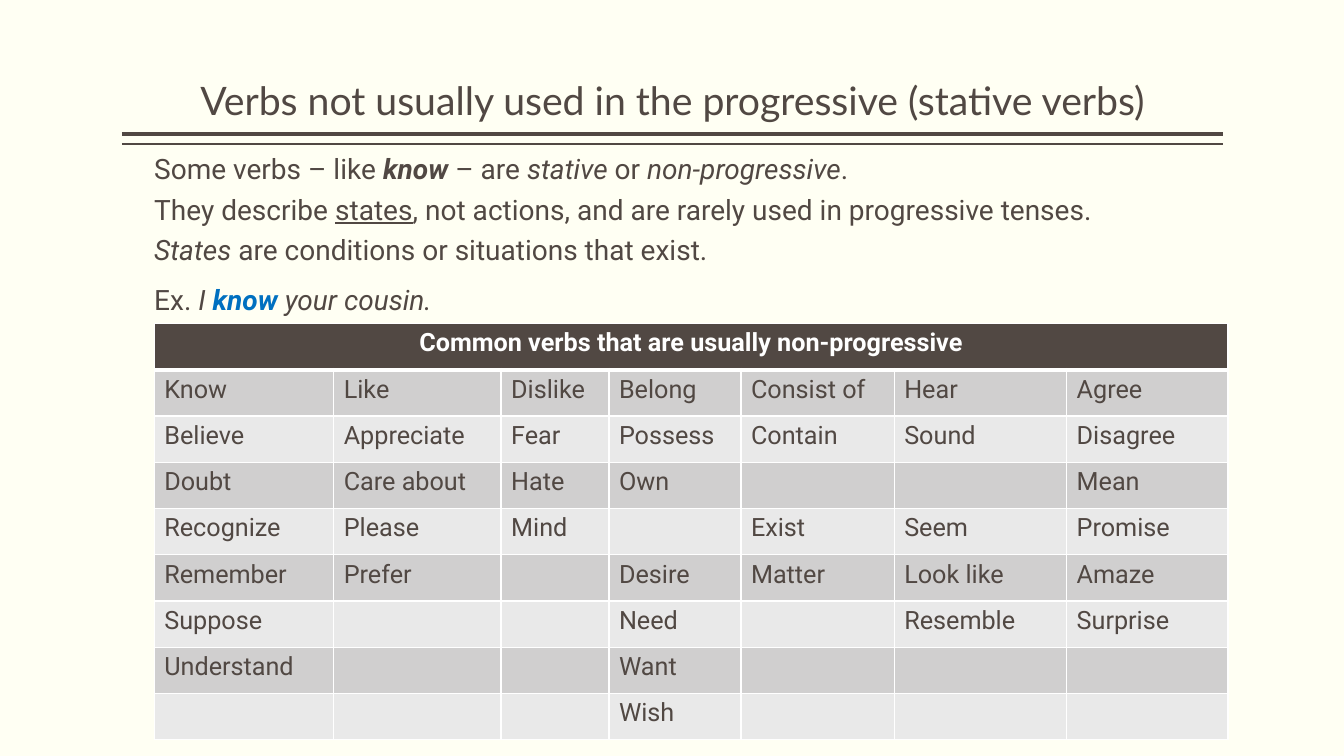
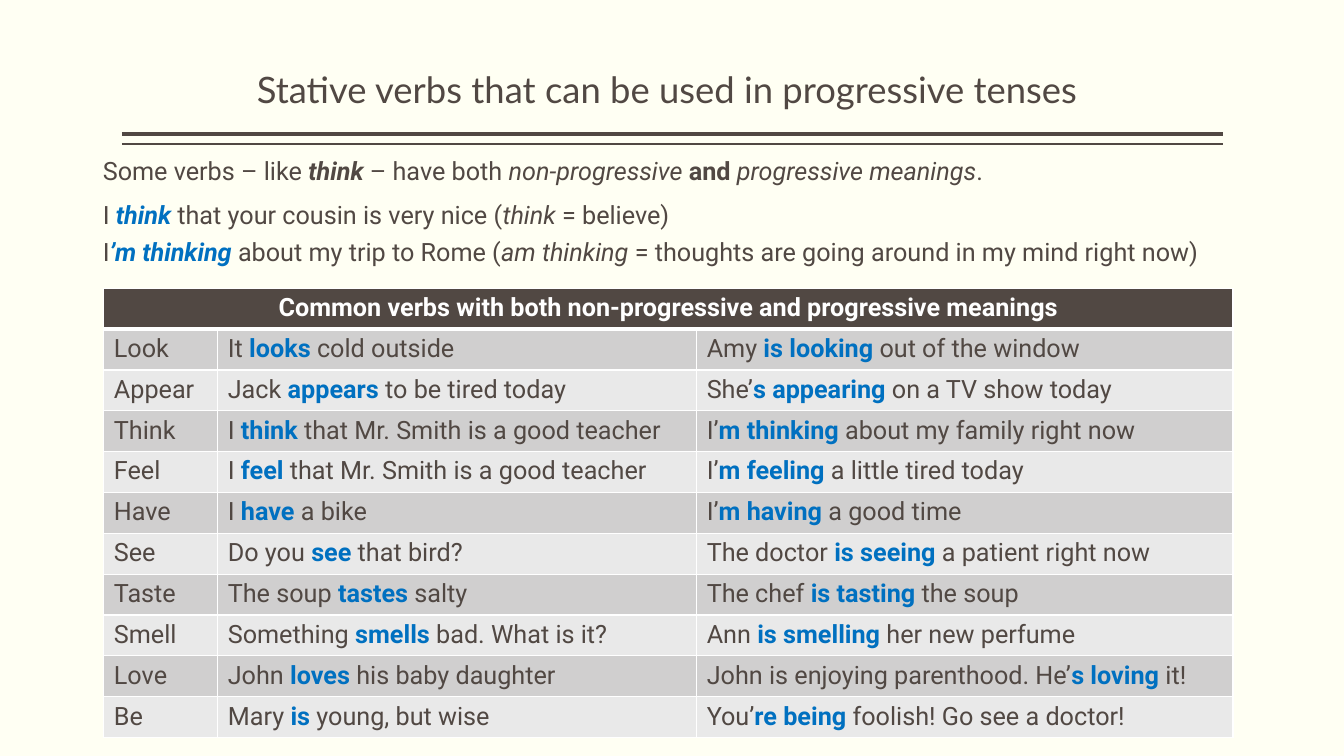
from dataclasses import dataclass

import pptx
import pptx.dml.color
import pptx.enum.shapes
import pptx.enum.text
import pptx.oxml.ns
import pptx.util
from lxml import etree

EMU_PER_PX = 9144  # 100 px to the inch


@dataclass(frozen=True)
class Theme:
    paper: str = "FFFFF3"
    ink: str = "514843"
    verb: str = "0070C0"
    white: str = "FFFFFF"
    bands: tuple = ("D0CFCF", "E9E9E9")
    title_font: str = "Lato"
    body_font: str = "Roboto"
    table_size: int = 18
    body_spacing: float = 1.2


THEME = Theme()

VERB_COLUMNS = [178, 166, 107, 131, 152, 171, 160]
VERB_ROWS = [
    ["Know", "Like", "Dislike", "Belong", "Consist of", "Hear", "Agree"],
    ["Believe", "Appreciate", "Fear", "Possess", "Contain", "Sound", "Disagree"],
    ["Doubt", "Care about", "Hate", "Own", "", "", "Mean"],
    ["Recognize", "Please", "Mind", "", "Exist", "Seem", "Promise"],
    ["Remember", "Prefer", "", "Desire", "Matter", "Look like", "Amaze"],
    ["Suppose", "", "", "Need", "", "Resemble", "Surprise"],
    ["Understand", "", "", "Want", "", "", ""],
    ["", "", "", "Wish", "", "", ""],
]

MEANING_COLUMNS = [113, 475, 532]
MEANING_ROWS = [
    ["Look", "It |looks| cold outside", "Amy |is looking| out of the window"],
    ["Appear", "Jack |appears| to be tired today", "She’|s appearing| on a TV show today"],
    ["Think", "I |think| that Mr. Smith is a good teacher",
     "I’|m thinking| about my family right now"],
    ["Feel", "I |feel| that Mr. Smith is a good teacher", "I’|m feeling| a little tired today"],
    ["Have", "I |have| a bike", "I’|m having| a good time"],
    ["See", "Do you |see| that bird?", "The doctor |is seeing| a patient right now"],
    ["Taste", "The soup |tastes| salty", "The chef |is tasting| the soup"],
    ["Smell", "Something |smells| bad. What is it?", "Ann |is smelling| her new perfume"],
    ["Love", "John |loves| his baby daughter",
     "John is enjoying parenthood. He’|s loving |it!"],
    ["Be", "Mary |is| young, but wise", "You’|re being| foolish! Go see a doctor!"],
]


def px(length):
    return pptx.util.Emu(length * EMU_PER_PX)


def rgb(color):
    return pptx.dml.color.RGBColor.from_string(color)


def set_font(font, name, size, color, bold=None):
    font.name = name
    font.size = pptx.util.Pt(size)
    font.color.rgb = rgb(color)
    font.bold = bold


def add_spans(para, spans):
    """Add (text, marks) spans; marks are b, i, u and v for a blue verb."""
    for text, marks in spans:
        span = para.add_run()
        span.text = text
        if "b" in marks:
            span.font.bold = True
        if "i" in marks:
            span.font.italic = True
        if "u" in marks:
            span.font.underline = True
        if "v" in marks:
            span.font.color.rgb = rgb(THEME.verb)


def add_text_box(page, left, top, width, height):
    box = page.shapes.add_textbox(px(left), px(top), px(width), px(height))
    frame = box.text_frame
    frame.word_wrap = True
    frame.margin_left = frame.margin_right = 0
    frame.margin_top = frame.margin_bottom = px(5)
    return frame


def add_rule(page, y, weight):
    rule = page.shapes.add_connector(
        pptx.enum.shapes.MSO_CONNECTOR.STRAIGHT, px(121), px(y), px(1213), px(y))
    rule.line.color.rgb = rgb(THEME.ink)
    rule.line.width = pptx.util.Pt(weight)
    etree.SubElement(rule._element.spPr, pptx.oxml.ns.qn("a:effectLst"))


def add_page(deck, title, left, top, size):
    """Add a page with the double rule and its title."""
    page = deck.slides.add_slide(deck.slide_layouts[6])
    add_rule(page, 133, 3)
    add_rule(page, 143, 1)
    frame = add_text_box(page, left, top, 1092, 72)
    frame.vertical_anchor = pptx.enum.text.MSO_ANCHOR.BOTTOM
    para = frame.paragraphs[0]
    para.text = title
    para.alignment = pptx.enum.text.PP_ALIGN.CENTER
    para.line_spacing = 0.9
    set_font(para.font, THEME.title_font, size, THEME.ink)
    return page


def add_body(page, place, size, lines):
    """Write lines given as (space before, line spacing, spans)."""
    frame = add_text_box(page, *place)
    for index, (space, spacing, spans) in enumerate(lines):
        para = frame.add_paragraph() if index else frame.paragraphs[0]
        para.line_spacing = spacing
        if space:
            para.space_before = pptx.util.Pt(space)
        add_spans(para, spans)
        set_font(para.font, THEME.body_font, size, THEME.ink)


def style_cell(cell, fill, top=1, bottom=1):
    """Draw white borders, then the fill, in the order the schema asks for."""
    properties = cell._tc.get_or_add_tcPr()
    for side, weight in (("L", 1), ("R", 1), ("T", top), ("B", bottom)):
        border = etree.SubElement(properties, pptx.oxml.ns.qn("a:ln" + side),
                                  w=str(pptx.util.Pt(weight)))
        paint = etree.SubElement(border, pptx.oxml.ns.qn("a:solidFill"))
        etree.SubElement(paint, pptx.oxml.ns.qn("a:srgbClr"), val=THEME.white)
    cell.fill.solid()
    cell.fill.fore_color.rgb = rgb(fill)


def add_verb_table(page, left, top, height, columns, heading, rows):
    """Add a banded table; text between bars in a cell is a blue verb."""
    table = page.shapes.add_table(len(rows) + 1, len(columns), px(left), px(top),
                                  px(sum(columns)), px(height)).table
    table.horz_banding = False
    for column, width in zip(table.columns, columns):
        column.width = px(width)

    for index in range(len(columns)):
        style_cell(table.cell(0, index), THEME.ink, bottom=3)
    table.cell(0, 0).merge(table.cell(0, len(columns) - 1))
    para = table.cell(0, 0).text_frame.paragraphs[0]
    para.text = heading
    para.alignment = pptx.enum.text.PP_ALIGN.CENTER
    set_font(para.font, THEME.body_font, THEME.table_size, THEME.white, bold=True)

    for row, texts in enumerate(rows, start=1):
        for column, text in enumerate(texts):
            cell = table.cell(row, column)
            style_cell(cell, THEME.bands[(row - 1) % 2], top=3 if row == 1 else 1)
            para = cell.text_frame.paragraphs[0]
            if text:
                add_spans(para, [(part, "bv" if index % 2 else "")
                                 for index, part in enumerate(text.split("|"))])
            set_font(para.font, THEME.body_font, THEME.table_size, THEME.ink)


def add_stative_page(deck):
    page = add_page(deck, "Verbs not usually used in the progressive (stative verbs)",
                    121, 56, 28)
    wide = THEME.body_spacing
    add_body(page, (153, 139, 1007, 180), 20, [
        (0, wide, [("Some verbs – like ", ""), ("know", "bi"), (" – are ", ""),
                   ("stative", "i"), (" or ", ""), ("non-progressive", "i"), (".", "")]),
        (0, wide, [("They describe ", ""), ("states", "u"),
                   (", not actions, and are rarely used in progressive tenses.", "")]),
        (0, wide, [("States", "i"), (" are conditions or situations that exist.", "")]),
        (12, 1.0, [("Ex. ", ""), ("I ", "i"), ("know ", "biv"), ("your cousin.", "i")]),
    ])
    add_verb_table(page, 153, 321, 413, VERB_COLUMNS,
                   "Common verbs that are usually non-progressive", VERB_ROWS)


def add_both_meanings_page(deck):
    page = add_page(deck, "Stative verbs that can be used in progressive tenses",
                    116, 43, 26)
    wide = THEME.body_spacing
    add_body(page, (102, 143, 1153, 140), 18, [
        (0, wide, [("Some verbs – like ", ""), ("think", "bi"), (" – have both ", ""),
                   ("non-progressive ", "i"), ("and ", "b"),
                   ("progressive meanings", "i"), (".", "")]),
        (6, wide, [("I ", ""), ("think", "biv"), (" that your cousin is very nice (", ""),
                   ("think", "i"), (" = believe)", "")]),
        (0, wide, [("I", ""), ("’m thinking ", "biv"), ("about my trip to Rome (", ""),
                   ("am thinking ", "i"),
                   ("= thoughts are going around in my mind right now)", "")]),
    ])
    add_verb_table(page, 103, 286, 446, MEANING_COLUMNS,
                   "Common verbs with both non-progressive and progressive meanings",
                   MEANING_ROWS)


def main():
    deck = pptx.Presentation()
    deck.slide_width, deck.slide_height = px(1333), px(750)
    background = deck.slide_master.background.fill
    background.solid()
    background.fore_color.rgb = rgb(THEME.paper)
    add_stative_page(deck)
    add_both_meanings_page(deck)
    deck.save("out.pptx")


if __name__ == "__main__":
    main()
